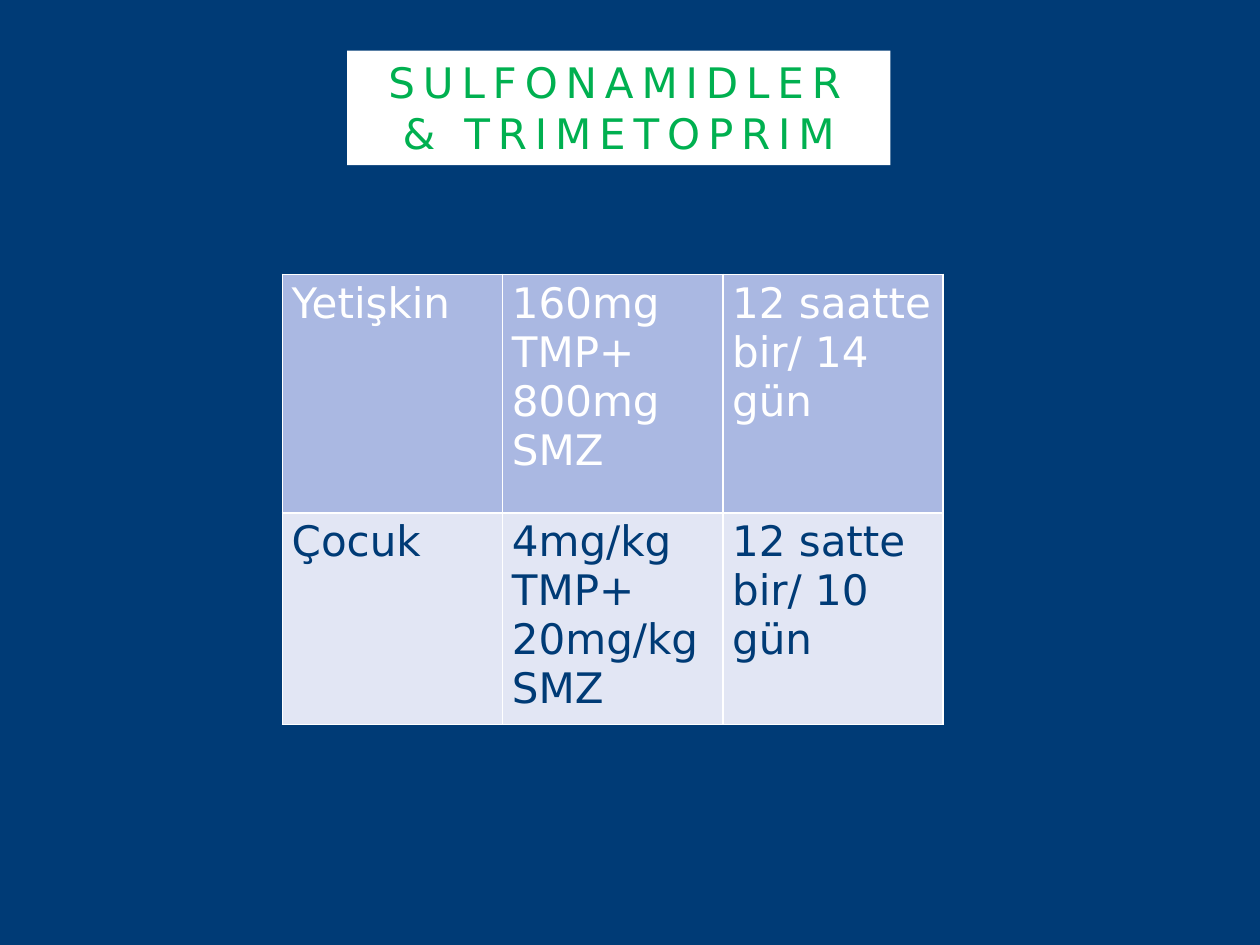
from lxml import etree
from pptx import Presentation
from pptx.dml.color import RGBColor
from pptx.enum import shapes, text
from pptx.oxml import ns
from pptx.util import Cm, Pt

NAVY = RGBColor(0x00, 0x3B, 0x76)
WHITE = RGBColor(0xFF, 0xFF, 0xFF)
GREEN = RGBColor(0x00, 0xB0, 0x50)
PERIWINKLE = RGBColor(0xAA, 0xB8, 0xE2)
PALE_BLUE = RGBColor(0xE2, 0xE6, 0xF4)
FONT = "DejaVu Sans"
DOSES = [
    ["Yetişkin", "160mg TMP+\n800mg\nSMZ", "12 saatte bir/ 14 gün"],
    ["Çocuk", "4mg/kg TMP+\n20mg/kg SMZ", "12 satte bir/ 10 gün"],
]
ROW_HEIGHTS = [4.81, 4.26]
ROW_COLOURS = [(PERIWINKLE, WHITE), (PALE_BLUE, NAVY)]


def format_text(frame, colour):
    for para in frame.paragraphs:
        for span in para.runs:
            span.font.name = FONT
            span.font.size = Pt(24)
            span.font.bold = False
            span.font.color.rgb = colour


def add_title(page, left, top, width, height):
    box = page.shapes.add_shape(
        shapes.MSO_SHAPE.RECTANGLE, Cm(left), Cm(top), Cm(width), Cm(height)
    )
    box.shadow.inherit = False
    box.fill.solid()
    box.fill.fore_color.rgb = WHITE
    box.line.fill.background()
    frame = box.text_frame
    frame.word_wrap = True
    frame.auto_size = text.MSO_AUTO_SIZE.SHAPE_TO_FIT_TEXT
    frame.vertical_anchor = text.MSO_ANCHOR.TOP
    frame.text = "SULFONAMIDLER & TRIMETOPRIM"
    para = frame.paragraphs[0]
    para.alignment = text.PP_ALIGN.CENTER
    format_text(frame, GREEN)
    para.runs[0]._r.get_or_add_rPr().set("spc", "450")


def add_borders(cell, colour):
    properties = cell._tc.get_or_add_tcPr()
    for side in ("lnL", "lnR", "lnT", "lnB"):
        line = etree.SubElement(properties, ns.qn(f"a:{side}"), w=str(Pt(1)))
        fill = etree.SubElement(line, ns.qn("a:solidFill"))
        etree.SubElement(fill, ns.qn("a:srgbClr"), val=str(colour))


def fill_cell(cell, wording, background, colour):
    cell.margin_left = cell.margin_right = Cm(0.19)
    cell.margin_top = cell.margin_bottom = Cm(0.1)
    add_borders(cell, WHITE)
    cell.fill.solid()
    cell.fill.fore_color.rgb = background
    cell.text_frame.text = wording
    format_text(cell.text_frame, colour)


def add_dose_table(page, left, top, width):
    table = page.shapes.add_table(
        len(DOSES), len(DOSES[0]),
        Cm(left), Cm(top), Cm(width), Cm(sum(ROW_HEIGHTS)),
    ).table
    for column in table.columns:
        column.width = Cm(width / len(DOSES[0]))
    for index, (row, height) in enumerate(zip(table.rows, ROW_HEIGHTS)):
        row.height = Cm(height)
        for cell, wording in zip(row.cells, DOSES[index]):
            fill_cell(cell, wording, *ROW_COLOURS[index])


def main():
    deck = Presentation()
    deck.slide_width, deck.slide_height = Cm(25.4), Cm(19.05)
    page = deck.slides.add_slide(deck.slide_layouts[6])
    page.background.fill.solid()
    page.background.fill.fore_color.rgb = NAVY
    add_title(page, 7, 1.02, 10.95, 2.31)
    add_dose_table(page, 5.69, 5.53, 13.32)
    deck.save("out.pptx")


if __name__ == "__main__":
    main()
